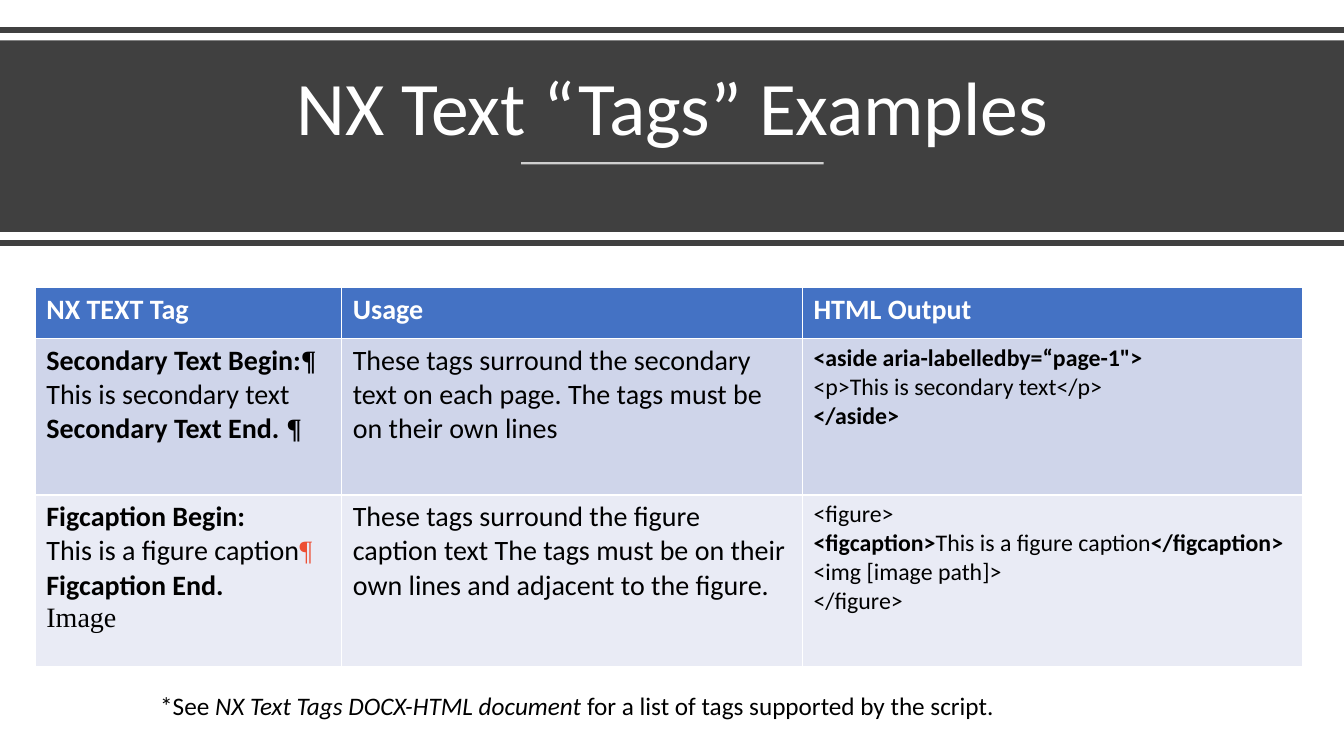
from pptx import Presentation
from pptx.dml.color import RGBColor
from pptx.enum.shapes import MSO_CONNECTOR, MSO_SHAPE
from pptx.enum.text import MSO_ANCHOR, MSO_AUTO_SIZE, PP_ALIGN
from pptx.oxml.ns import qn
from pptx.util import Inches, Pt
from lxml.etree import SubElement

HUES = {
    "dark": "404040", "white": "FFFFFF", "black": "000000", "red": "ED4E33",
    "head": "4472C4", "odd": "CFD5EA", "even": "E9EBF5",
}


def hue(name):
    return RGBColor.from_string(HUES[name])


def add_run(para, text, size, tone="black", marks=""):
    run = para.add_run()
    run.text = text
    font = run.font
    font.size = Pt(size)
    font.name = "Times New Roman" if "t" in marks else "Calibri"
    font.bold = "b" in marks
    font.italic = "i" in marks
    font.color.rgb = hue(tone)


deck = Presentation()
deck.slide_width = Inches(13.33)
deck.slide_height = Inches(7.5)
slide = deck.slides.add_slide(deck.slide_layouts[5])
shapes = slide.shapes

title = shapes.title
title.left, title.top = Inches(0.58), Inches(0.54)
title.width, title.height = Inches(12.18), Inches(1.02)
frame = title.text_frame
frame.auto_size = MSO_AUTO_SIZE.NONE
frame.vertical_anchor = MSO_ANCHOR.BOTTOM
para = frame.paragraphs[0]
para.alignment = PP_ALIGN.CENTER
para.line_spacing = 0.9
add_run(para, "NX Text “Tags” Examples", 54, "white")

band = shapes.add_shape(
    MSO_SHAPE.RECTANGLE, 0, Inches(0.4), deck.slide_width, Inches(1.9))
band.shadow.inherit = False
band.fill.solid()
band.fill.fore_color.rgb = hue("dark")
band.line.fill.background()
title.element.addprevious(band.element)

rules = [
    (0, 13.33, 0.3, "dark", 4, 100),
    (5.17, 8.17, 1.62, "white", 1.5, 75),
    (0, 13.33, 2.41, "dark", 4, 100),
]
for left, right, top, tone, width, solid in rules:
    rule = shapes.add_connector(
        MSO_CONNECTOR.STRAIGHT,
        Inches(left), Inches(top), Inches(right), Inches(top))
    rule.line.color.rgb = hue(tone)
    rule.line.width = Pt(width)
    props = rule.element.spPr
    SubElement(props, qn("a:effectLst"))
    if solid < 100:
        color = props.find(".//" + qn("a:srgbClr"))
        SubElement(color, qn("a:alpha")).set("val", str(solid * 1000))

rows = [
    [
        [[("NX TEXT Tag", "b")]],
        [[("Usage", "b")]],
        [[("HTML Output", "b")]],
    ],
    [
        [
            [("Secondary Text Begin:", "b"), ("¶", "bt")],
            [("This is secondary text", "")],
            [("Secondary Text End.", "b"), (" ¶", "bt")],
        ],
        [[("These tags surround the secondary text on each page. "
           "The tags must be on their own lines", "")]],
        [
            [("<aside aria-labelledby=“page-1\">", "b")],
            [("<p>This is secondary text</p>", "")],
            [("</aside>", "b")],
        ],
    ],
    [
        [
            [("Figcaption Begin:", "b")],
            [("This is a figure caption", ""), ("¶", "tr")],
            [("Figcaption End.", "b")],
            [("Image", "t")],
        ],
        [[("These tags surround the figure caption text The tags must be "
           "on their own lines and adjacent to the figure.", "")]],
        [
            [("<figure>", "")],
            [("<figcaption>", "b"), ("This is a figure caption", ""),
             ("</figcaption>", "b")],
            [("<img [image path]>", "")],
            [("</figure>", "")],
        ],
    ],
]
table = shapes.add_table(
    3, 3, Inches(0.35), Inches(2.85), Inches(12.57), Inches(3.76)).table
for col, width in zip(table.columns, (3.04, 4.57, 4.96)):
    col.width = Inches(width)
for row, height in zip(table.rows, (0.51, 1.55, 1.7)):
    row.height = Inches(height)

for r, row in enumerate(rows):
    for c, lines in enumerate(row):
        cell = table.cell(r, c)
        cell.fill.solid()
        cell.fill.fore_color.rgb = hue(("head", "odd", "even")[r])
        cell.margin_left = cell.margin_right = Inches(0.11)
        cell.margin_top = cell.margin_bottom = Inches(0.05)
        size = 17 if r and c == 2 else 20
        frame = cell.text_frame
        for n, line in enumerate(lines):
            para = frame.add_paragraph() if n else frame.paragraphs[0]
            for text, marks in line:
                tone = "red" if "r" in marks else "black" if r else "white"
                add_run(para, text, size, tone, marks)

note = shapes.add_textbox(
    Inches(1.49), Inches(6.8), Inches(10.64), Inches(0.4))
frame = note.text_frame
frame.word_wrap = True
frame.auto_size = MSO_AUTO_SIZE.SHAPE_TO_FIT_TEXT
para = frame.paragraphs[0]
add_run(para, "*See ", 18)
add_run(para, "NX Text Tags DOCX-HTML document ", 18, marks="i")
add_run(para, "for a list of tags supported by the script.", 18)

deck.save("out.pptx")
